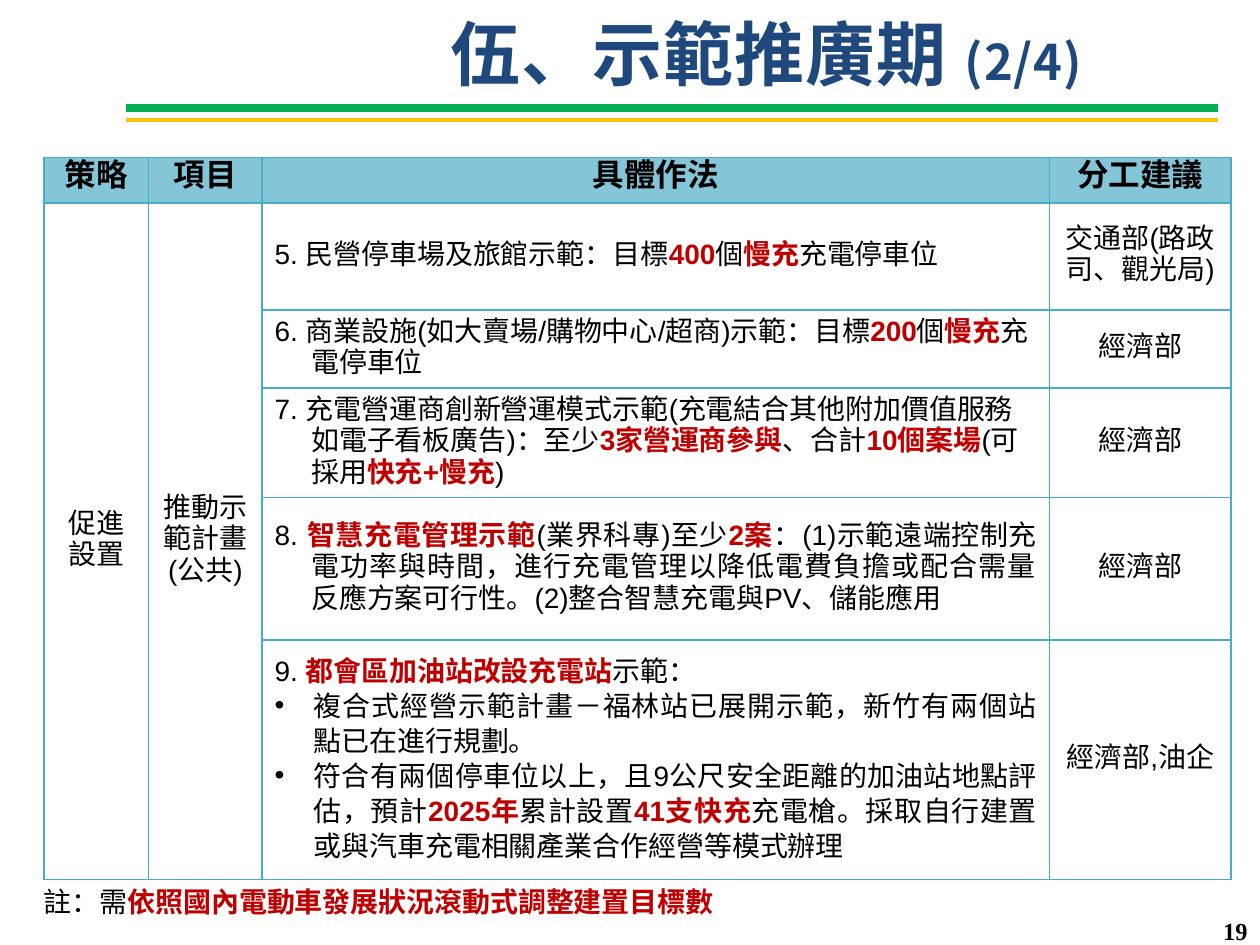
from lxml.etree import SubElement
from pptx import Presentation
from pptx.dml.color import RGBColor
from pptx.enum.shapes import MSO_CONNECTOR
from pptx.enum.text import MSO_ANCHOR as ANCHOR, PP_ALIGN as ALIGN
from pptx.oxml.ns import qn
from pptx.util import Inches, Pt

BLACK = RGBColor(0x00, 0x00, 0x00)
WHITE = RGBColor(0xFF, 0xFF, 0xFF)
RED = RGBColor(0xC0, 0x00, 0x00)
NAVY = RGBColor(0x1F, 0x49, 0x7D)
GREEN = RGBColor(0x00, 0xB0, 0x50)
GOLD = RGBColor(0xFF, 0xC0, 0x00)
TEAL = RGBColor(0x4B, 0xAC, 0xC6)
HEADER_FILL = RGBColor(0x84, 0xC6, 0xD8)
CJK = "Noto Sans CJK SC"

COLUMNS = [0.83, 0.9, 6.25, 1.44]
ROWS = [0.36, 0.62, 0.62, 0.87, 1.13, 1.9]
HEADERS = ["策略", "項目", "具體作法", "分工建議"]
GROUPS = ["促進設置", "推動示範計畫(公共)"]
HANGING = {"indent": 0.29}
JUSTIFIED = {"indent": 0.29, "align": ALIGN.JUSTIFY}
STATION = {"align": ALIGN.JUSTIFY, "spacing": 20}
BULLET = {**STATION, "indent": 0.31, "bullet": "•"}
MEASURES = [
    ([("5. 民營停車場及旅館示範：目標*400*個*慢充*充電停車位", {})],
     "交通部(路政司、觀光局)"),
    ([("6. 商業設施(如大賣場/購物中心/超商)示範：目標*200*個*慢充*充電停車位", HANGING)],
     "經濟部"),
    ([("7. 充電營運商創新營運模式示範(充電結合其他附加價值服務如電子看板廣告)：至少"
       "*3家營運商參與*、合計*10個案場*(可採用*快充+慢充*)", HANGING)],
     "經濟部"),
    ([("8. *智慧充電管理示範*(業界科專)至少*2案*：(1)示範遠端控制充電功率與時間，"
       "進行充電管理以降低電費負擔或配合需量反應方案可行性。"
       "(2)整合智慧充電與PV、儲能應用", JUSTIFIED)],
     "經濟部"),
    ([("9. *都會區加油站改設充電站*示範：", STATION),
      ("複合式經營示範計畫－福林站已展開示範，新竹有兩個站點已在進行規劃。", BULLET),
      ("符合有兩個停車位以上，且9公尺安全距離的加油站地點評估，預計*2025年*累計設置"
       "*41支快充*充電槍。採取自行建置或與汽車充電相關產業合作經營等模式辦理", BULLET)],
     "經濟部,油企"),
]


def add_run(p, text, size=16, font="Arial", color=BLACK, bold=False, tracking=None):
    """Append a formatted run to a paragraph."""
    r = p.add_run()
    r.text = text
    r.font.size, r.font.name, r.font.bold = Pt(size), font, bold
    r.font.color.rgb = color
    rPr = r.font._element
    if font == CJK:
        SubElement(rPr, qn("a:ea"), typeface=font)
    if tracking:
        rPr.set("spc", str(round(tracking * 100)))


def write(p, text, align=ALIGN.LEFT, spacing=None, indent=0, bullet=None, **font):
    """Fill a paragraph, with text between asterisks in bold red."""
    if indent:
        pPr = p._p.get_or_add_pPr()
        pPr.set("marL", str(Inches(indent)))
        pPr.set("indent", str(-Inches(indent)))
        if bullet:
            SubElement(pPr, qn("a:buFont"), typeface="Arial")
            SubElement(pPr, qn("a:buChar"), char=bullet)
    p.alignment = align
    if spacing:
        p.line_spacing = Pt(spacing)
    for i, part in enumerate(text.split("*")):
        if part:
            add_run(p, part, **(font | {"color": RED, "bold": True} if i % 2 else font))


def add_text(slide, left, top, width, height, anchor=ANCHOR.TOP):
    """Add a wrapping text box and return its first paragraph."""
    tf = slide.shapes.add_textbox(
        Inches(left), Inches(top), Inches(width), Inches(height)).text_frame
    tf.word_wrap = True
    tf.vertical_anchor = anchor
    return tf.paragraphs[0]


def add_rule(slide, y, color, weight):
    """Draw a horizontal rule under the title."""
    line = slide.shapes.add_connector(
        MSO_CONNECTOR.STRAIGHT, Inches(1), Inches(y), Inches(9.67), Inches(y))
    line.line.color.rgb = color
    line.line.width = Pt(weight)
    SubElement(line._element.spPr, qn("a:effectLst"))


def style_cell(cell, fill):
    """Give a cell its borders, fill and anchor."""
    tcPr = cell._tc.get_or_add_tcPr()
    for side in ("lnL", "lnR", "lnT", "lnB"):
        ln = SubElement(tcPr, qn(f"a:{side}"), w=str(Pt(1)))
        SubElement(SubElement(ln, qn("a:solidFill")), qn("a:srgbClr"), val=str(TEAL))
    cell.fill.solid()
    cell.fill.fore_color.rgb = fill
    cell.vertical_anchor = ANCHOR.MIDDLE


def fill_cell(cell, paragraphs):
    """Write (text, format) paragraphs into a cell."""
    tf = cell.text_frame
    for i, (text, fmt) in enumerate(paragraphs):
        p = tf.add_paragraph() if i else tf.paragraphs[0]
        write(p, text, **({"spacing": 18} | fmt))


def add_measures(slide):
    """Build the table of measures."""
    table = slide.shapes.add_table(
        len(ROWS), len(COLUMNS), Inches(0.35), Inches(1.25),
        Inches(sum(COLUMNS)), Inches(sum(ROWS))).table
    table.first_row = table.horz_banding = False
    for column, width in zip(table.columns, COLUMNS):
        column.width = Inches(width)
    for i, (row, height) in enumerate(zip(table.rows, ROWS)):
        row.height = Inches(height)
        for cell in row.cells:
            style_cell(cell, WHITE if i else HEADER_FILL)

    centered = {"align": ALIGN.CENTER}
    for col, text in enumerate(HEADERS):
        fill_cell(table.cell(0, col), [(text, centered | {"size": 18, "bold": True})])
    for col, text in enumerate(GROUPS):
        table.cell(1, col).merge(table.cell(len(ROWS) - 1, col))
        fill_cell(table.cell(1, col), [(text, centered)])
    for row, (measure, agency) in enumerate(MEASURES, 1):
        fill_cell(table.cell(row, 2), measure)
        fill_cell(table.cell(row, 3), [(agency, centered)])


def main():
    """Build and save the slide."""
    prs = Presentation()
    prs.slide_width, prs.slide_height = Inches(10), Inches(7.5)
    slide = prs.slides.add_slide(prs.slide_layouts[6])
    add_rule(slide, 0.86, GREEN, 4.5)
    add_rule(slide, 0.95, GOLD, 2.25)
    write(add_text(slide, 7.67, 7.22, 2.33, 0.28), "19", align=ALIGN.RIGHT,
          size=14, font="Times New Roman", bold=True)
    add_measures(slide)
    write(add_text(slide, 0.25, 6.97, 6.33, 0.37),
          "註：需*依照國內電動車發展狀況滾動式調整建置目標數*")
    title = add_text(slide, 2, 0.08, 8.17, 0.68, ANCHOR.MIDDLE)
    heading = {"font": CJK, "color": NAVY, "bold": True, "tracking": 0.6}
    write(title, "伍、示範推廣期 ", align=ALIGN.CENTER, size=40, **heading)
    add_run(title, "(2/4)", size=28, **heading)
    prs.save("out.pptx")


if __name__ == "__main__":
    main()
